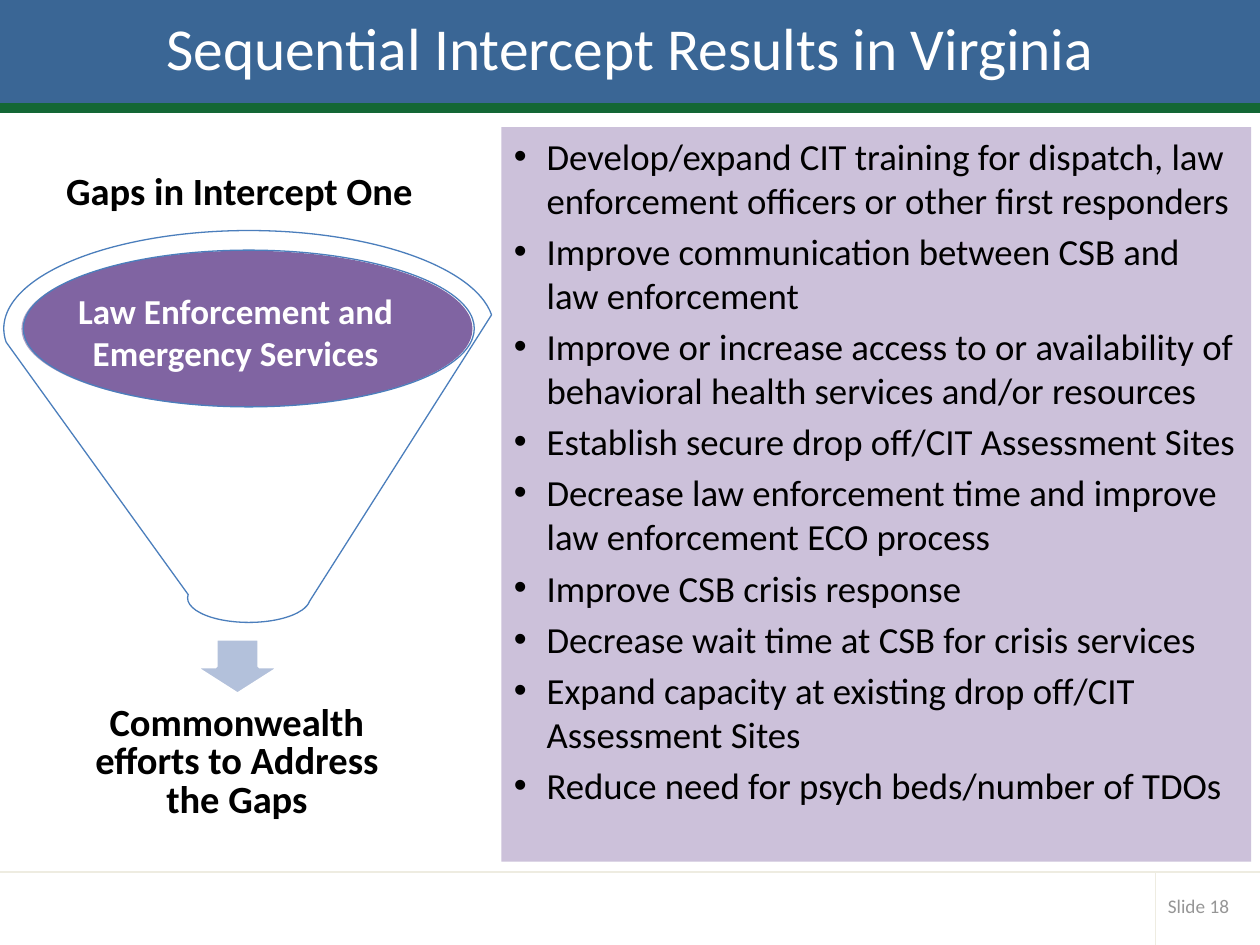
"""Build the Sequential Intercept results slide with its funnel and list of efforts."""
from lxml import etree
from pptx import Presentation
from pptx import util as u
from pptx.dml.color import RGBColor
from pptx.enum import shapes, text
from pptx.oxml import ns

COLORS = {
    "blue": "3A6695", "green": "136735", "rule": "EEECE1", "gray": "969696",
    "lilac": "CCC1DA", "purple": "8064A2", "arrow": "B3C1DB", "outline": "4B7EBC",
    "white": "FFFFFF", "black": "000000",
}
COLORS = {name: RGBColor.from_string(value) for name, value in COLORS.items()}
SHAPE = shapes.MSO_SHAPE
CENTER = text.PP_ALIGN.CENTER
MIDDLE = text.MSO_ANCHOR.MIDDLE


def add_block(kind, place, fill, line=None, width=0):
    block = page.shapes.add_shape(kind, *map(u.Inches, place))
    block.shadow.inherit = False
    block.fill.solid()
    block.fill.fore_color.rgb = COLORS[fill]
    if line:
        block.line.color.rgb = COLORS[line]
        block.line.width = u.Pt(width)
    else:
        block.line.fill.background()
    return block


def write(box, lines, size, color, bold=False, frame=None, layout=None, bullet=None):
    for name, value in {"word_wrap": True, **(frame or {})}.items():
        setattr(box.text_frame, name, value)
    for index, line in enumerate(lines):
        para = box.text_frame.paragraphs[0] if index == 0 else box.text_frame.add_paragraph()
        for name, value in (layout or {}).items():
            setattr(para, name, value)
        if bullet:
            para.space_before = u.Pt(4 if index else 0)
            props = para._p.get_or_add_pPr()
            props.set("marL", str(u.Inches(0.26)))
            props.set("indent", str(u.Inches(-0.26)))
            etree.SubElement(props, ns.qn("a:buFont")).set("typeface", "Arial")
            etree.SubElement(props, ns.qn("a:buChar")).set("char", bullet)
        para.text = line
        for name, value in {"name": "Calibri", "size": u.Pt(size), "bold": bold}.items():
            setattr(para.font, name, value)
        para.font.color.rgb = COLORS[color]


deck = Presentation()
deck.slide_width, deck.slide_height = u.Inches(10), u.Inches(7.5)
page = deck.slides.add_slide(deck.slide_layouts[6])

banner = add_block(SHAPE.RECTANGLE, (0, 0, 10, 0.83), "blue", "blue", 2)
add_block(SHAPE.RECTANGLE, (0, 0.83, 10, 0.05), "green", "green", 2)
write(banner, ["Sequential Intercept Results in Virginia"], 34, "white",
      frame={"vertical_anchor": MIDDLE},
      layout={"alignment": CENTER, "line_spacing": u.Pt(35)})

for ends in [(0, 6.92, 10, 6.92), (9.17, 6.92, 9.17, 7.5)]:
    rule = page.shapes.add_connector(shapes.MSO_CONNECTOR.STRAIGHT, *map(u.Inches, ends))
    rule.line.color.rgb = COLORS["rule"]
    rule.line.width = u.Pt(1)
    etree.SubElement(rule._element.spPr, ns.qn("a:effectLst"))

efforts = add_block(SHAPE.RECTANGLE, (3.98, 1.01, 5.95, 5.83), "lilac")
write(efforts, [
    "Develop/expand CIT training for dispatch, law enforcement officers or other first responders",
    "Improve communication between CSB and law enforcement",
    "Improve or increase access to or availability of behavioral health services and/or resources",
    "Establish secure drop off/CIT Assessment Sites",
    "Decrease law enforcement time and improve law enforcement ECO process",
    "Improve CSB crisis response",
    "Decrease wait time at CSB for crisis services",
    "Expand capacity at existing drop off/CIT Assessment Sites",
    "Reduce need for psych beds/number of TDOs",
], 21, "black", frame={"vertical_anchor": text.MSO_ANCHOR.TOP},
    layout={"alignment": text.PP_ALIGN.LEFT}, bullet="•")

add_block(SHAPE.DOWN_ARROW, (1.54, 5.07, 0.69, 0.44), "arrow", "white", 2)
add_block(SHAPE.OVAL, (0.17, 1.99, 3.58, 1.24), "purple")
funnel = add_block(SHAPE.FUNNEL, (0.03, 1.83, 3.89, 3.11), "white", "outline", 0.75)
tint = funnel._element.spPr.find(ns.qn("a:solidFill"))[0]
etree.SubElement(tint, ns.qn("a:alpha")).set("val", "40000")

labels = [
    ((9.17, 7.04, 0.74, 0.29), "Slide 18", 11, "gray", False,
     {"vertical_anchor": MIDDLE}, {}),
    ((0.41, 1.32, 2.98, 0.43), "Gaps in Intercept One", 22, "black", True,
     {"word_wrap": False}, {"alignment": CENTER, "line_spacing": 0.9}),
    ((0.64, 5.55, 2.48, 1.03), "Commonwealth efforts to Address the Gaps", 22, "black", True,
     {}, {"alignment": CENTER, "line_spacing": u.Pt(22)}),
    ((0.51, 2.25, 2.72, 0.77), "Law Enforcement and\vEmergency Services", 20, "white", True,
     {"word_wrap": False}, {"alignment": CENTER}),
]
for place, label, size, color, bold, frame, layout in labels:
    box = page.shapes.add_textbox(*map(u.Inches, place))
    write(box, [label], size, color, bold, frame, layout)

deck.save("out.pptx")
